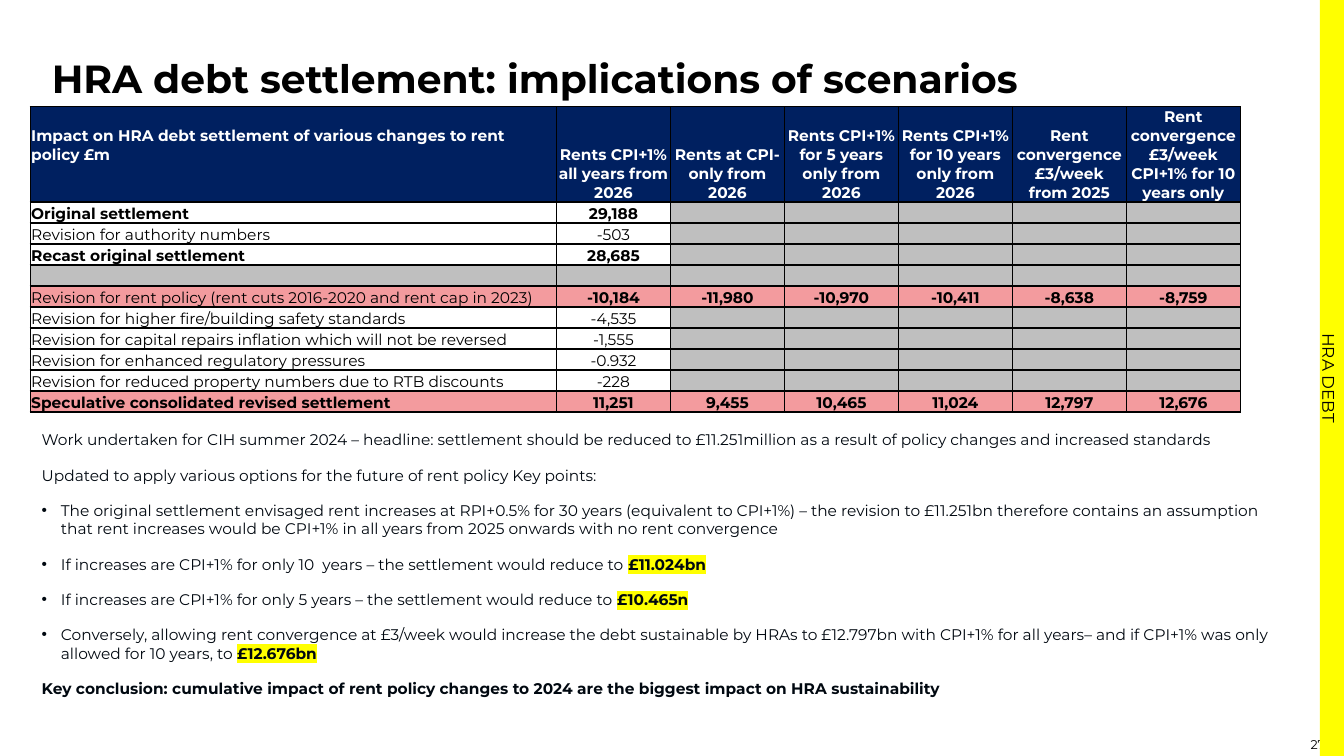
from lxml.etree import SubElement
from pptx import Presentation
from pptx.dml.color import RGBColor
from pptx.enum.shapes import MSO_SHAPE
from pptx.enum.text import MSO_ANCHOR, MSO_AUTO_SIZE, PP_ALIGN
from pptx.oxml import parse_xml
from pptx.oxml.ns import nsdecls, qn
from pptx.util import Inches, Pt

FONT = "Montserrat"
COLORS = {
    "black": "000000", "white": "FFFFFF", "ink": "000810", "navy": "002060",
    "grey": "BFBFBF", "pink": "F39B9E", "yellow": "FFFF00",
}
WIDTH, HEIGHT = Inches(13.33), Inches(7.5)
LABEL_COL, VALUE_COL = 39.16, 8.48
HEADER_ROW, BODY_ROW = 12.6, 2.78

HEADERS = [
    "Impact on HRA debt settlement of various changes to rent policy £m",
    "Rents CPI+1% all years from 2026",
    "Rents at CPI-only from 2026",
    "Rents CPI+1% for 5 years only from 2026",
    "Rents CPI+1% for 10 years only from 2026",
    "Rent convergence £3/week from 2025",
    "Rent convergence £3/week\nCPI+1% for 10 years only",
]
ROWS = [
    ("Original settlement", ["29,188"], True, True),
    ("Revision for authority numbers", ["-503"], False, False),
    ("Recast original settlement", ["28,685"], True, True),
    ("", [], False, False),
    ("Revision for rent policy (rent cuts 2016-2020 and rent cap in 2023)",
     ["-10,184", "-11,980", "-10,970", "-10,411", "-8,638", "-8,759"], False, True),
    ("Revision for higher fire/building safety standards", ["-4,535"], False, False),
    ("Revision for capital repairs inflation which will not be reversed",
     ["-1,555"], False, False),
    ("Revision for enhanced regulatory pressures", ["-0.932"], False, False),
    ("Revision for reduced property numbers due to RTB discounts",
     ["-228"], False, False),
    ("Speculative consolidated revised settlement",
     ["11,251", "9,455", "10,465", "11,024", "12,797", "12,676"], True, True),
]
NOTES = [
    ("plain", "Work undertaken for CIH summer 2024 – headline: settlement should be "
     "reduced to £11.251million as a result of policy changes and increased standards", ""),
    ("plain", "Updated to apply various options for the future of rent policy Key points:", ""),
    ("bullet", "The original settlement envisaged rent increases at RPI+0.5% for 30 years "
     "(equivalent to CPI+1%) – the revision to £11.251bn therefore contains an assumption "
     "that rent increases would be CPI+1% in all years from 2025 onwards with no rent "
     "convergence", ""),
    ("bullet", "If increases are CPI+1% for only 10  years – the settlement would reduce to ",
     "£11.024bn"),
    ("bullet", "If increases are CPI+1% for only 5 years – the settlement would reduce to ",
     "£10.465n"),
    ("bullet", "Conversely, allowing rent convergence at £3/week would increase the debt "
     "sustainable by HRAs to £12.797bn with CPI+1% for all years– and if CPI+1% was only "
     "allowed for 10 years, to ", "£12.676bn"),
    ("bold", "Key conclusion: cumulative impact of rent policy changes to 2024 are the "
     "biggest impact on HRA sustainability", ""),
]


def rgb(name):
    return RGBColor.from_string(COLORS[name])


def across(percent):
    return round(WIDTH * percent / 100)


def down(percent):
    return round(HEIGHT * percent / 100)


def box(x, y, w, h):
    return across(x), down(y), across(w), down(h)


def place(sp, *area):
    sp.left, sp.top, sp.width, sp.height = box(*area)


def paint(item, color):
    item.fill.solid()
    item.fill.fore_color.rgb = rgb(color)


def add_run(p, text, size, color="black", bold=False, highlight=None):
    r = p.add_run()
    r.text = text
    r.font.size = Pt(size)
    r.font.bold = bold
    r.font.color.rgb = rgb(color)
    if highlight:
        mark = SubElement(r.font._element, qn("a:highlight"))
        SubElement(mark, qn("a:srgbClr"), val=COLORS[highlight])
    r.font.name = FONT


def add_title(s, text):
    sp = s.shapes.title
    place(sp, 3.1, 7.2, 89.2, 5.6)
    tf = sp.text_frame
    tf.auto_size = MSO_AUTO_SIZE.NONE
    tf.vertical_anchor = MSO_ANCHOR.TOP
    p = tf.paragraphs[0]
    p.alignment = PP_ALIGN.LEFT
    p.line_spacing = 0.9
    add_run(p, text, 28, bold=True)


def add_page_number(s, text):
    tf = s.shapes.add_textbox(*box(95.5, 96.93, 3.83, 3.07)).text_frame
    tf.word_wrap = True
    tf.vertical_anchor = MSO_ANCHOR.MIDDLE
    p = tf.paragraphs[0]
    p.alignment = PP_ALIGN.RIGHT
    add_run(p, text, 9)


def add_side_band(s, text):
    sp = s.shapes.add_shape(MSO_SHAPE.RECTANGLE, *box(70.97, 48.4, 56.26, 3.2))
    sp.rotation = 90
    sp.shadow.inherit = False
    paint(sp, "yellow")
    sp.line.fill.background()
    tf = sp.text_frame
    tf.vertical_anchor = MSO_ANCHOR.TOP
    p = tf.paragraphs[0]
    p.alignment = PP_ALIGN.CENTER
    p.space_after = Pt(12)
    add_run(p, text, 12)


def add_borders(cell):
    tcPr = cell._tc.get_or_add_tcPr()
    for i, side in enumerate(("lnL", "lnR", "lnT", "lnB")):
        tcPr.insert(i, parse_xml(
            f'<a:{side} {nsdecls("a")} w="12700"><a:solidFill>'
            f'<a:srgbClr val="{COLORS["black"]}"/></a:solidFill></a:{side}>'))


def fill_cell(cell, text, fill, color, bold, align):
    cell.margin_left = cell.margin_right = cell.margin_top = Inches(0.01)
    cell.margin_bottom = 0
    cell.vertical_anchor = MSO_ANCHOR.BOTTOM
    paint(cell, fill)
    add_borders(cell)
    tf = cell.text_frame
    for i, line in enumerate(text.split("\n")):
        p = tf.add_paragraph() if i else tf.paragraphs[0]
        p.alignment = align
        if line:
            add_run(p, line, 11, color, bold)
        else:
            SubElement(p._p, qn("a:endParaRPr"), sz="1100")


def row_fill(values, text):
    if len(values) > 1:
        return "pink"
    return "white" if text else "grey"


def add_settlement_table(s):
    cols = len(HEADERS)
    area = box(2.25, 14.13, LABEL_COL + VALUE_COL * (cols - 1),
               HEADER_ROW + BODY_ROW * len(ROWS))
    table = s.shapes.add_table(len(ROWS) + 1, cols, *area).table
    table.horz_banding = False
    for c, col in enumerate(table.columns):
        col.width = across(VALUE_COL if c else LABEL_COL)
    for i, row in enumerate(table.rows):
        row.height = down(BODY_ROW if i else HEADER_ROW)
    aligns = [PP_ALIGN.LEFT] + [PP_ALIGN.CENTER] * (cols - 1)
    for c, text in enumerate(HEADERS):
        fill_cell(table.cell(0, c), text, "navy", "white", True, aligns[c])
    table.cell(0, 0).margin_bottom = down(5)
    for i, (label, values, label_bold, values_bold) in enumerate(ROWS, 1):
        texts = [label] + values + [""] * (cols - 1 - len(values))
        for c, text in enumerate(texts):
            fill_cell(table.cell(i, c), text, row_fill(values, text), "black",
                      values_bold if c else label_bold, aligns[c])


def set_bullet(p, bulleted):
    pPr = p._p.get_or_add_pPr()
    indent = Inches(0.19) if bulleted else 0
    pPr.set("marL", str(indent))
    pPr.set("indent", str(-indent))
    if bulleted:
        SubElement(pPr, qn("a:buChar"), char="•")
    else:
        SubElement(pPr, qn("a:buNone"))


def add_notes(s):
    sp = s.placeholders[1]
    place(sp, 3.1, 56.95, 91.67, 37.2)
    paint(sp, "white")
    tf = sp.text_frame
    tf.auto_size = MSO_AUTO_SIZE.NONE
    tf.vertical_anchor = MSO_ANCHOR.TOP
    tf.margin_left = tf.margin_right = tf.margin_top = tf.margin_bottom = 0
    for i, (style, text, figure) in enumerate(NOTES):
        p = tf.add_paragraph() if i else tf.paragraphs[0]
        set_bullet(p, style == "bullet")
        p.space_before = Pt(0)
        p.space_after = Pt(12)
        add_run(p, text, 11, "ink", style == "bold")
        if figure:
            add_run(p, figure, 11, "ink", True, "yellow")


def main():
    prs = Presentation()
    prs.slide_width, prs.slide_height = WIDTH, HEIGHT
    s = prs.slides.add_slide(prs.slide_layouts[1])
    add_title(s, "HRA debt settlement: implications of scenarios")
    add_page_number(s, "27")
    add_side_band(s, "HRA DEBT")
    add_settlement_table(s)
    add_notes(s)
    prs.save("out.pptx")


if __name__ == "__main__":
    main()
